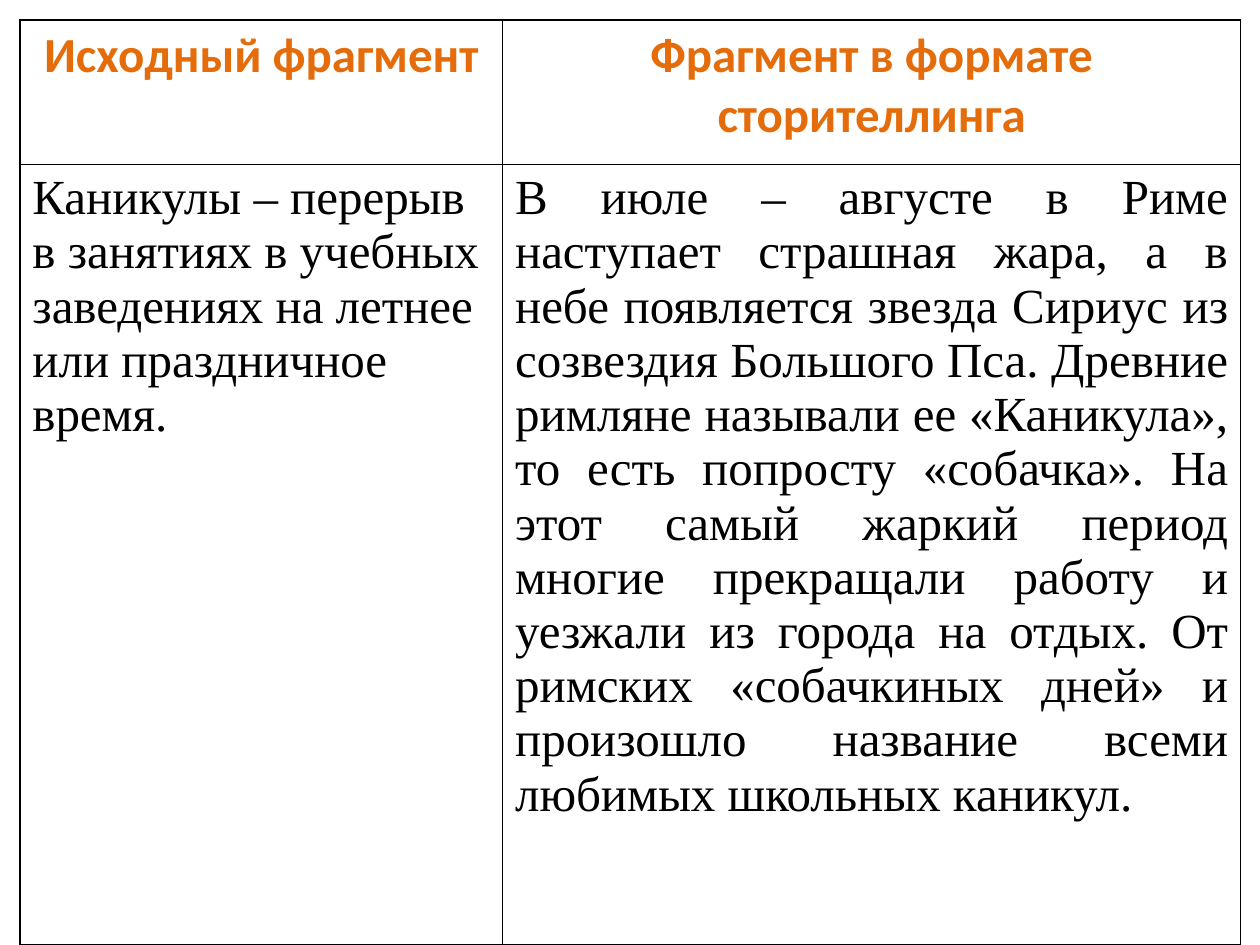
import lxml.etree
import pptx
import pptx.dml.color
import pptx.enum.text
import pptx.oxml.ns
import pptx.util

Cm = pptx.util.Cm
Pt = pptx.util.Pt
ALIGN = pptx.enum.text.PP_ALIGN


def color(value):
    return pptx.dml.color.RGBColor.from_string(value)


def add_borders(cell, value, width):
    qn = pptx.oxml.ns.qn
    properties = cell._tc.get_or_add_tcPr()
    for side in ("lnL", "lnR", "lnT", "lnB"):
        line = lxml.etree.SubElement(properties, qn(f"a:{side}"), w=str(width))
        fill = lxml.etree.SubElement(line, qn("a:solidFill"))
        lxml.etree.SubElement(fill, qn("a:srgbClr"), val=str(color(value)))


presentation = pptx.Presentation()
presentation.slide_width = Cm(25.4)
presentation.slide_height = Cm(19.05)
slide = presentation.slides.add_slide(presentation.slide_layouts[6])

column_widths = [9.73, 14.88]
row_heights = [2.92, 15.72]
row_styles = [("Calibri", "E46C0A", True), ("Times New Roman", "000000", False)]
rows = [
    [
        ("Исходный фрагмент", ALIGN.CENTER),
        ("Фрагмент в формате сторителлинга", ALIGN.CENTER),
    ],
    [
        (
            "Каникулы – перерыв в занятиях в учебных заведениях "
            "на летнее или праздничное время.",
            ALIGN.LEFT,
        ),
        (
            "В июле – августе в Риме наступает страшная жара, а в небе "
            "появляется звезда Сириус из созвездия Большого Пса. Древние "
            "римляне называли ее «Каникула», то есть попросту «собачка». "
            "На этот самый жаркий период многие прекращали работу и уезжали "
            "из города на отдых. От римских «собачкиных дней» и произошло "
            "название всеми любимых школьных каникул.",
            ALIGN.JUSTIFY,
        ),
    ],
]

table = slide.shapes.add_table(
    len(rows), len(column_widths), Cm(0.4), Cm(0.4),
    Cm(sum(column_widths)), Cm(sum(row_heights)),
).table
table.horz_banding = False

for column, width in zip(table.columns, column_widths):
    column.width = Cm(width)

for row, height, contents, style in zip(table.rows, row_heights, rows, row_styles):
    row.height = Cm(height)
    font_name, font_color, bold = style
    for cell, (text, alignment) in zip(row.cells, contents):
        add_borders(cell, "000000", Pt(1))
        cell.fill.background()
        cell.text_frame.text = text
        paragraph = cell.text_frame.paragraphs[0]
        paragraph.alignment = alignment
        font = paragraph.runs[0].font
        font.name = font_name
        font.size = Pt(28)
        font.bold = bold
        font.color.rgb = color(font_color)

presentation.save("out.pptx")
